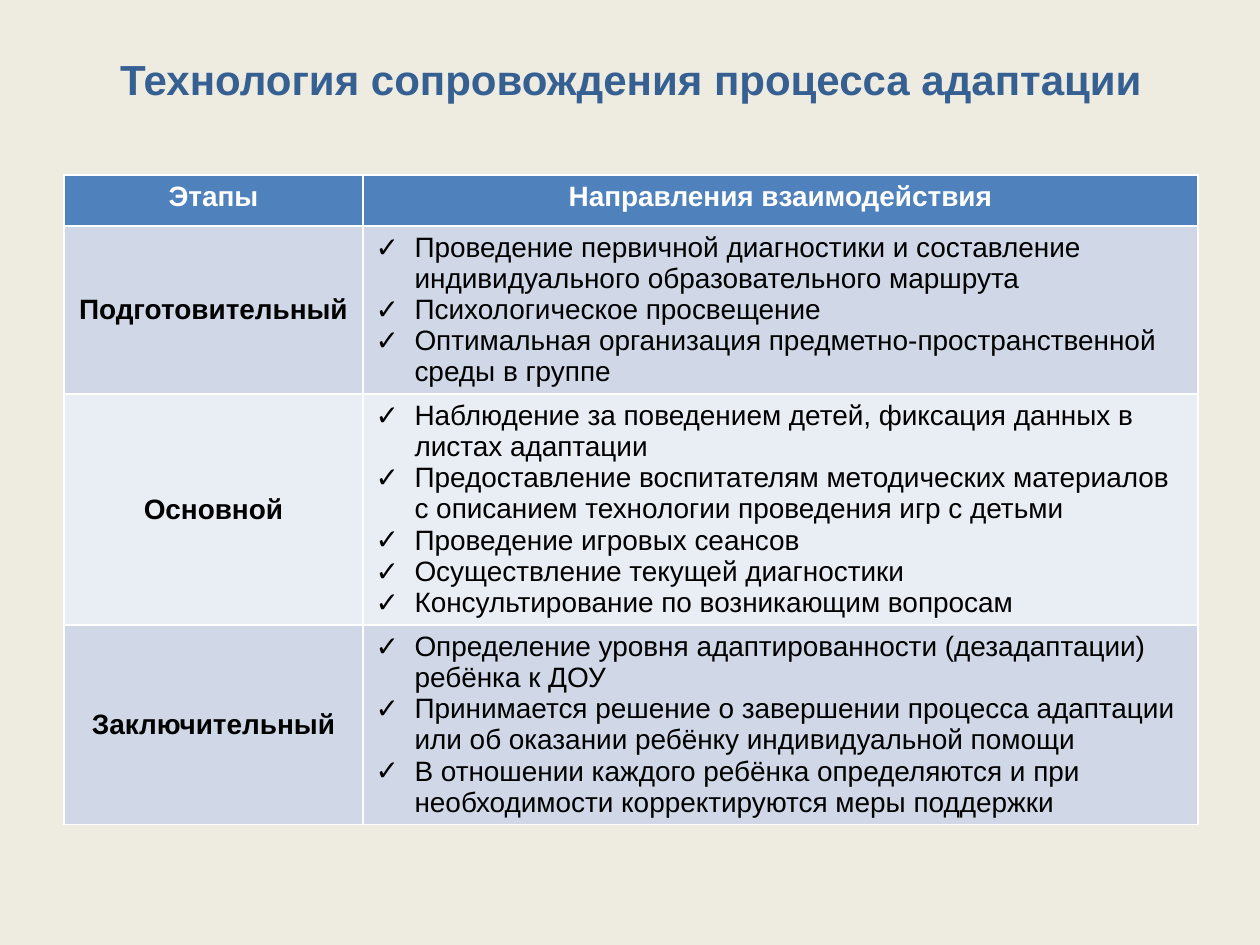
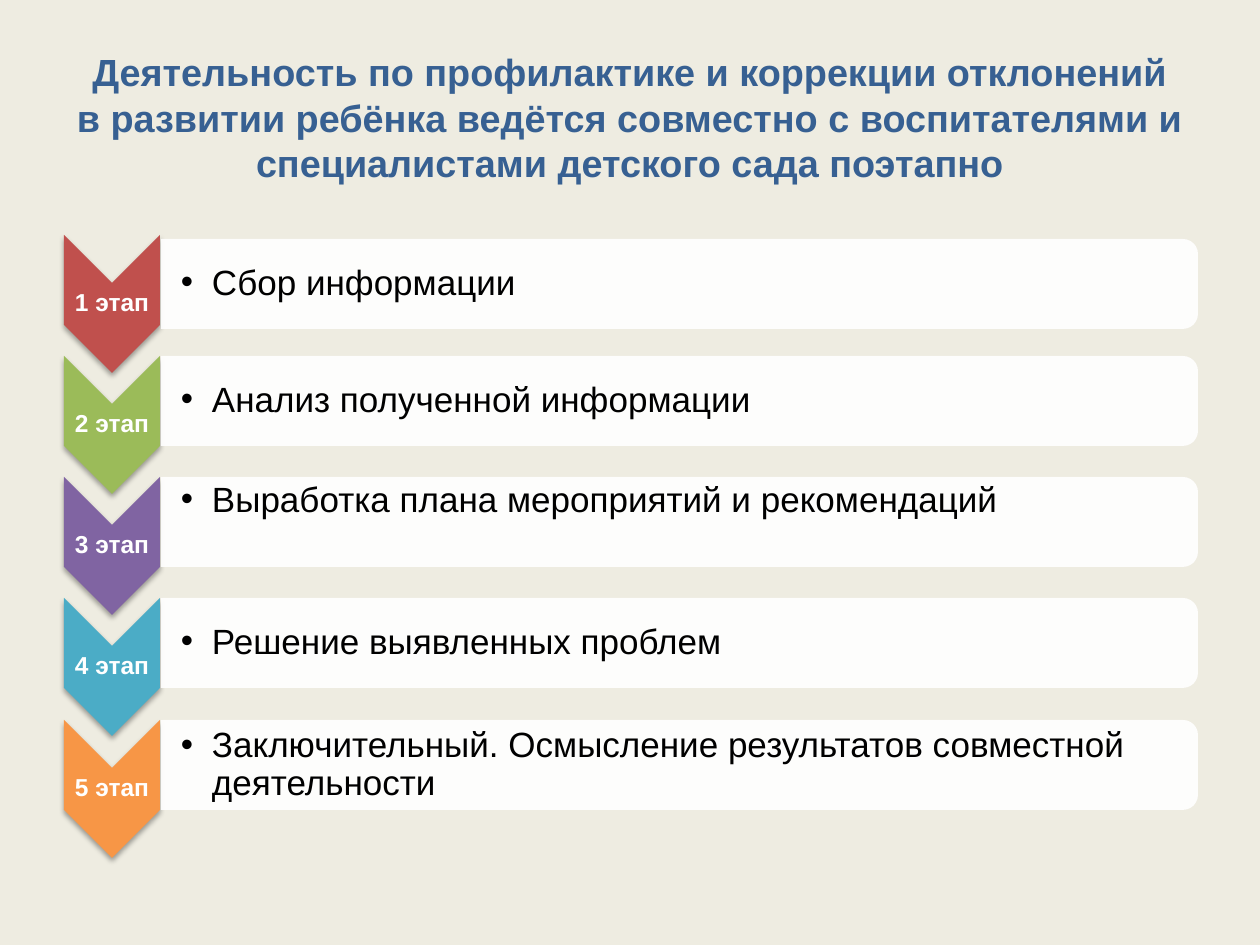
from lxml import etree
from pptx import Presentation
from pptx import util as u
from pptx.dml.color import RGBColor
from pptx.enum import shapes, text
from pptx.oxml import ns

PX = 914400 / 126
FONT = "Arial"
COLORS = {
    "background": "EEECE1", "title": "376092", "header": "4F81BD",
    "band_dark": "D0D8E8", "band_light": "E9EDF4",
    "white": "FFFFFF", "black": "000000",
    "red": "C0504D", "green": "9BBB59", "purple": "8064A2",
    "blue": "4BACC6", "orange": "F79646",
}

ADAPTATION_TITLE = "Технология сопровождения процесса адаптации"
TABLE_HEADER = ("Этапы", "Направления взаимодействия")
TABLE_STAGES = [
    ("Подготовительный", [
        "Проведение первичной диагностики и составление индивидуального образовательного маршрута",
        "Психологическое просвещение",
        "Оптимальная организация предметно-пространственной среды в группе",
    ]),
    ("Основной", [
        "Наблюдение за поведением детей, фиксация данных в листах адаптации",
        "Предоставление воспитателям методических материалов с описанием технологии проведения игр с детьми",
        "Проведение игровых сеансов",
        "Осуществление текущей диагностики",
        "Консультирование по возникающим вопросам",
    ]),
    ("Заключительный", [
        "Определение уровня адаптированности (дезадаптации) ребёнка к ДОУ",
        "Принимается решение о завершении процесса адаптации или об оказании ребёнку индивидуальной помощи",
        "В отношении каждого ребёнка определяются и при необходимости корректируются меры поддержки",
    ]),
]
COLUMN_WIDTHS = (299, 835)
ROW_HEIGHTS = (51, 168, 231, 199)

STEPS_TITLE = ("Деятельность по профилактике и коррекции отклонений в развитии ребёнка "
               "ведётся совместно с воспитателями и специалистами детского сада поэтапно")
# label, colour, text, vertical anchor, bar offset below the chevron top
STEPS = [
    ("1 этап", "red", "Сбор информации", "MIDDLE", 4),
    ("2 этап", "green", "Анализ полученной информации", "MIDDLE", 0),
    ("3 этап", "purple", "Выработка плана мероприятий и рекомендаций", "TOP", 0),
    ("4 этап", "blue", "Решение выявленных проблем", "MIDDLE", 0),
    ("5 этап", "orange", "Заключительный. Осмысление результатов совместной деятельности",
     "MIDDLE", 0),
]
LEFT, RIGHT = 64, 1198
STEPS_TOP, STEPS_BOTTOM = 235, 720
CHEVRON_WIDTH, CHEVRON_HEIGHT = 96, 138
BAR_HEIGHT = 90


def px(length):
    return u.Emu(round(length * PX))


def rgb(name):
    return RGBColor.from_string(COLORS[name])


def format_para(para, size, color, bold=False, centered=False):
    para.alignment = text.PP_ALIGN.CENTER if centered else text.PP_ALIGN.LEFT
    for span in para.runs:
        font = span.font
        font.name, font.size, font.bold = FONT, u.Pt(size), bold
        font.color.rgb = rgb(color)


def add_bullet(para, mark, indent):
    props = para._p.get_or_add_pPr()
    props.set("marL", str(px(indent)))
    props.set("indent", str(-px(indent)))
    etree.SubElement(props, ns.qn("a:buFont"), typeface=FONT)
    etree.SubElement(props, ns.qn("a:buChar"), char=mark)


def add_page(deck, title, size, left, top):
    page = deck.slides.add_slide(deck.slide_layouts[5])
    page.background.fill.solid()
    page.background.fill.fore_color.rgb = rgb("background")
    box = page.shapes.title
    box.left, box.top, box.width, box.height = map(px, (left, top, 1134, 158))
    box.text_frame.text = title
    box.text_frame.vertical_anchor = text.MSO_ANCHOR.MIDDLE
    format_para(box.text_frame.paragraphs[0], size, "title", bold=True, centered=True)
    return page


def fill_cell(cell, content, fill):
    cell.text = content
    cell.fill.solid()
    cell.fill.fore_color.rgb = rgb(fill)


def add_stage_table(page):
    table = page.shapes.add_table(
        len(ROW_HEIGHTS), len(COLUMN_WIDTHS), px(LEFT), px(175),
        px(sum(COLUMN_WIDTHS)), px(sum(ROW_HEIGHTS))).table
    for column, width in zip(table.columns, COLUMN_WIDTHS):
        column.width = px(width)
    for row, height in zip(table.rows, ROW_HEIGHTS):
        row.height = px(height)
    for index, heading in enumerate(TABLE_HEADER):
        cell = table.cell(0, index)
        fill_cell(cell, heading, "header")
        format_para(cell.text_frame.paragraphs[0], 16, "white", bold=True, centered=True)
    for index, (stage, tasks) in enumerate(TABLE_STAGES, 1):
        band = "band_dark" if index % 2 else "band_light"
        name_cell, task_cell = table.cell(index, 0), table.cell(index, 1)
        fill_cell(name_cell, stage, band)
        name_cell.vertical_anchor = text.MSO_ANCHOR.MIDDLE
        format_para(name_cell.text_frame.paragraphs[0], 16, "black", bold=True, centered=True)
        fill_cell(task_cell, "\n".join(tasks), band)
        for para in task_cell.text_frame.paragraphs:
            format_para(para, 16, "black")
            add_bullet(para, "✓", 39)


def add_turned_shape(page, kind, left, top, width, height, color):
    """Add a shape turned by 90 degrees that covers the given visible area."""
    shift = (width - height) / 2
    shape = page.shapes.add_shape(kind, px(left + shift), px(top - shift),
                                  px(height), px(width))
    shape.rotation = 90
    shape.shadow.inherit = False
    shape.fill.solid()
    shape.fill.fore_color.rgb = rgb(color)
    shape.line.fill.background()
    return shape


def add_color_alpha(color, percent):
    etree.SubElement(color, ns.qn("a:alpha"), val=str(percent * 1000))


def add_soft_shadow(shape):
    effects = shape._element.spPr.find(ns.qn("a:effectLst"))
    shadow = etree.SubElement(effects, ns.qn("a:outerShdw"), blurRad=str(u.Pt(3.1)),
                              dist=str(u.Pt(1.8)), dir="5400000", rotWithShape="0")
    color = etree.SubElement(shadow, ns.qn("a:srgbClr"), val=COLORS["black"])
    add_color_alpha(color, 35)


def add_text(page, content, left, top, width, height, inset=1, anchor="MIDDLE"):
    frame = page.shapes.add_textbox(*map(px, (left, top, width, height))).text_frame
    frame.word_wrap = True
    frame.margin_left = px(inset)
    frame.margin_right = frame.margin_top = frame.margin_bottom = px(1)
    frame.vertical_anchor = text.MSO_ANCHOR[anchor]
    frame.text = content
    para = frame.paragraphs[0]
    para.line_spacing = 0.9
    return para


def add_step(page, top, label, color, content, anchor, bar_offset):
    chevron = add_turned_shape(page, shapes.MSO_SHAPE.CHEVRON, LEFT, top,
                               CHEVRON_WIDTH, CHEVRON_HEIGHT, color)
    add_soft_shadow(chevron)
    notch = CHEVRON_WIDTH // 2
    para = add_text(page, label, LEFT, top + notch, CHEVRON_WIDTH, CHEVRON_HEIGHT - 2 * notch)
    format_para(para, 14, "white", bold=True, centered=True)

    bar_left, bar_top = LEFT + CHEVRON_WIDTH + 1, top + bar_offset
    bar = add_turned_shape(page, shapes.MSO_SHAPE.ROUND_2_SAME_RECTANGLE, bar_left, bar_top,
                           RIGHT - bar_left, BAR_HEIGHT, "white")
    add_color_alpha(bar._element.spPr.find(ns.qn("a:solidFill"))[0], 90)
    para = add_text(page, content, bar_left, bar_top + 4, RIGHT - bar_left - 4,
                    BAR_HEIGHT - 8, inset=20, anchor=anchor)
    format_para(para, 20, "black")
    add_bullet(para, "•", 31)


def main():
    deck = Presentation()
    deck.slide_width, deck.slide_height = px(1260), px(945)

    add_stage_table(add_page(deck, ADAPTATION_TITLE, 24, LEFT, 0))

    page = add_page(deck, STEPS_TITLE, 21.6, 63, 38)
    for index, step in enumerate(STEPS):
        top = STEPS_TOP + index * (STEPS_BOTTOM - STEPS_TOP) // (len(STEPS) - 1)
        add_step(page, top, *step)

    deck.save("out.pptx")


if __name__ == "__main__":
    main()
